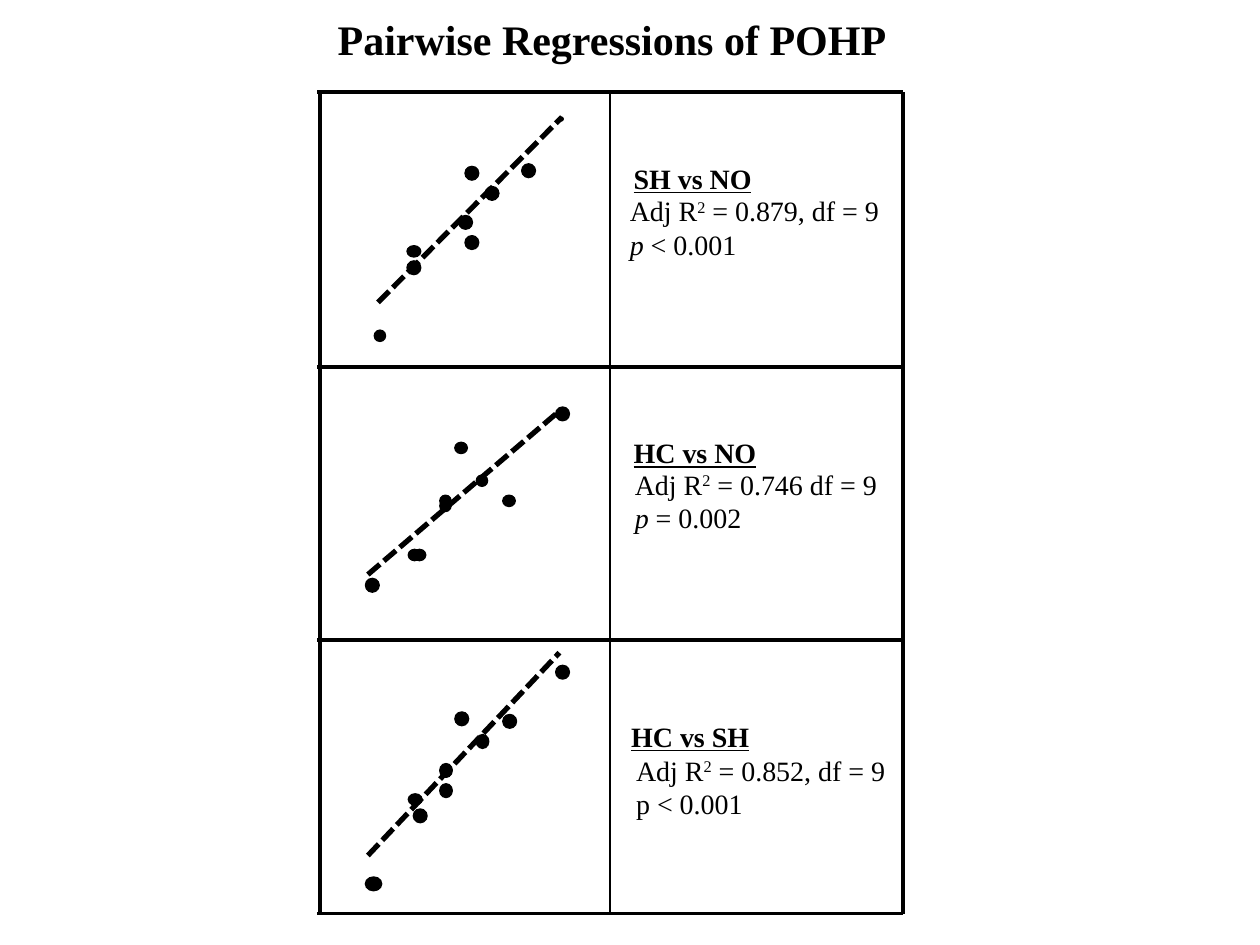
from pptx import Presentation
from pptx.dml.color import RGBColor
from pptx.enum.dml import MSO_LINE
from pptx.enum.shapes import MSO_CONNECTOR, MSO_SHAPE
from pptx.enum.text import MSO_AUTO_SIZE
from pptx.oxml.ns import qn
from pptx.util import Inches, Pt

OVAL = MSO_SHAPE.OVAL
LINE = MSO_CONNECTOR.STRAIGHT
DASH = MSO_LINE.SQUARE_DOT
GROW = MSO_AUTO_SIZE.SHAPE_TO_FIT_TEXT
BLACK = "000000"
FONT = "Times New Roman"


def tone(code):
    return RGBColor.from_string(code)


def write(par, text, size=16, bold=False, italic=False, under=False, base=0):
    run = par.add_run()
    run.text = text
    font = run.font
    font.name = FONT
    font.size = Pt(size)
    font.bold = bold
    font.italic = italic
    font.underline = under
    font.color.rgb = tone(BLACK)
    if base:
        font._element.set("baseline", str(base * 1000))


deck = Presentation()
deck.slide_width = Inches(10)
deck.slide_height = Inches(7.5)
slide = deck.slides.add_slide(deck.slide_layouts[6])
shapes = slide.shapes

left, mid, right = 2.52, 4.84, 7.17
rows = [0.73, 2.91, 5.08, 7.25]
lines = []
for y in rows:
    for start, end in ((left, mid), (mid, right)):
        lines.append((start, y, end, y, 2.25, None))
for top, base in zip(rows, rows[1:]):
    for x, width in ((2.54, 2.25), (mid, 1.25), (right, 2.25)):
        lines.append((x, base, x, top, width, None))
trends = [
    (3, 2.4, 4.46, 0.93),
    (2.92, 4.56, 4.43, 3.27),
    (2.92, 6.79, 4.44, 5.18),
]
for trend in trends:
    lines.append((*trend, 3, DASH))

dots = [
    (2.97, 2.62, 0.09, 0.09),
    (3.69, 1.87, 0.11, 0.11),
    (3.85, 1.48, 0.11, 0.11),
    (3.69, 1.32, 0.11, 0.11),
    (4.44, 0.93, 0.03, 0.03),
    (3.23, 1.95, 0.11, 0.09),
    (3.64, 1.71, 0.11, 0.11),
    (3.23, 2.07, 0.11, 0.11),
    (4.14, 1.3, 0.11, 0.11),
    (2.9, 4.59, 0.11, 0.11),
    (3.49, 3.93, 0.09, 0.09),
    (3.78, 3.77, 0.09, 0.09),
    (3.99, 3.93, 0.1, 0.09),
    (4.41, 3.23, 0.11, 0.11),
    (3.24, 4.36, 0.1, 0.09),
    (3.49, 3.97, 0.09, 0.09),
    (3.28, 4.36, 0.1, 0.09),
    (3.61, 3.51, 0.1, 0.09),
    (2.9, 6.96, 0.13, 0.11),
    (3.49, 6.22, 0.1, 0.11),
    (3.78, 5.83, 0.1, 0.11),
    (3.99, 5.67, 0.11, 0.11),
    (4.41, 5.28, 0.11, 0.11),
    (3.24, 6.3, 0.11, 0.09),
    (3.49, 6.06, 0.1, 0.11),
    (3.28, 6.42, 0.11, 0.11),
    (3.61, 5.65, 0.11, 0.11),
]
for spot in dots:
    dot = shapes.add_shape(OVAL, *map(Inches, spot))
    dot.shadow.inherit = False
    dot.fill.solid()
    dot.fill.fore_color.rgb = tone(BLACK)
    dot.line.color.rgb = tone(BLACK)
    dot.line.width = Pt(0.75)

for *ends, width, dash in lines:
    line = shapes.add_connector(LINE, *map(Inches, ends))
    line.line.color.rgb = tone(BLACK)
    line.line.width = Pt(width)
    if dash:
        line.line.dash_style = dash
    props = line._element.spPr
    props.append(props.makeelement(qn("a:effectLst"), {}))

heads = [
    ("Pairwise Regressions of POHP", (2.68, 0.11, 4.65, 0.4), 24, False),
    ("SH vs NO", (5.03, 1.28, 1.13, 0.27), 16, True),
    ("HC vs NO", (5.03, 3.46, 1.13, 0.27), 16, True),
    ("HC vs SH", (5.01, 5.71, 1.13, 0.27), 16, True),
]
for text, spot, size, under in heads:
    frame = shapes.add_textbox(*map(Inches, spot)).text_frame
    frame.margin_left = frame.margin_right = 0
    frame.margin_top = frame.margin_bottom = 0
    frame.word_wrap = True
    frame.auto_size = GROW
    write(frame.paragraphs[0], text, size=size, bold=True, under=under)

stats = [
    (" = 0.879, df = 9", " < 0.001", True, (4.9, 1.49, 2.21, 0.64)),
    (" = 0.746 df = 9", " = 0.002", True, (4.94, 3.66, 2.16, 0.64)),
    (" = 0.852, df = 9", " < 0.001", False, (4.95, 5.93, 2.21, 0.64)),
]
for fit, prob, slant, spot in stats:
    frame = shapes.add_textbox(*map(Inches, spot)).text_frame
    frame.word_wrap = False
    frame.auto_size = GROW
    par = frame.paragraphs[0]
    write(par, "Adj R")
    write(par, "2", base=30)
    write(par, fit)
    par = frame.add_paragraph()
    write(par, "p", italic=slant)
    write(par, prob)

deck.save("out.pptx")
